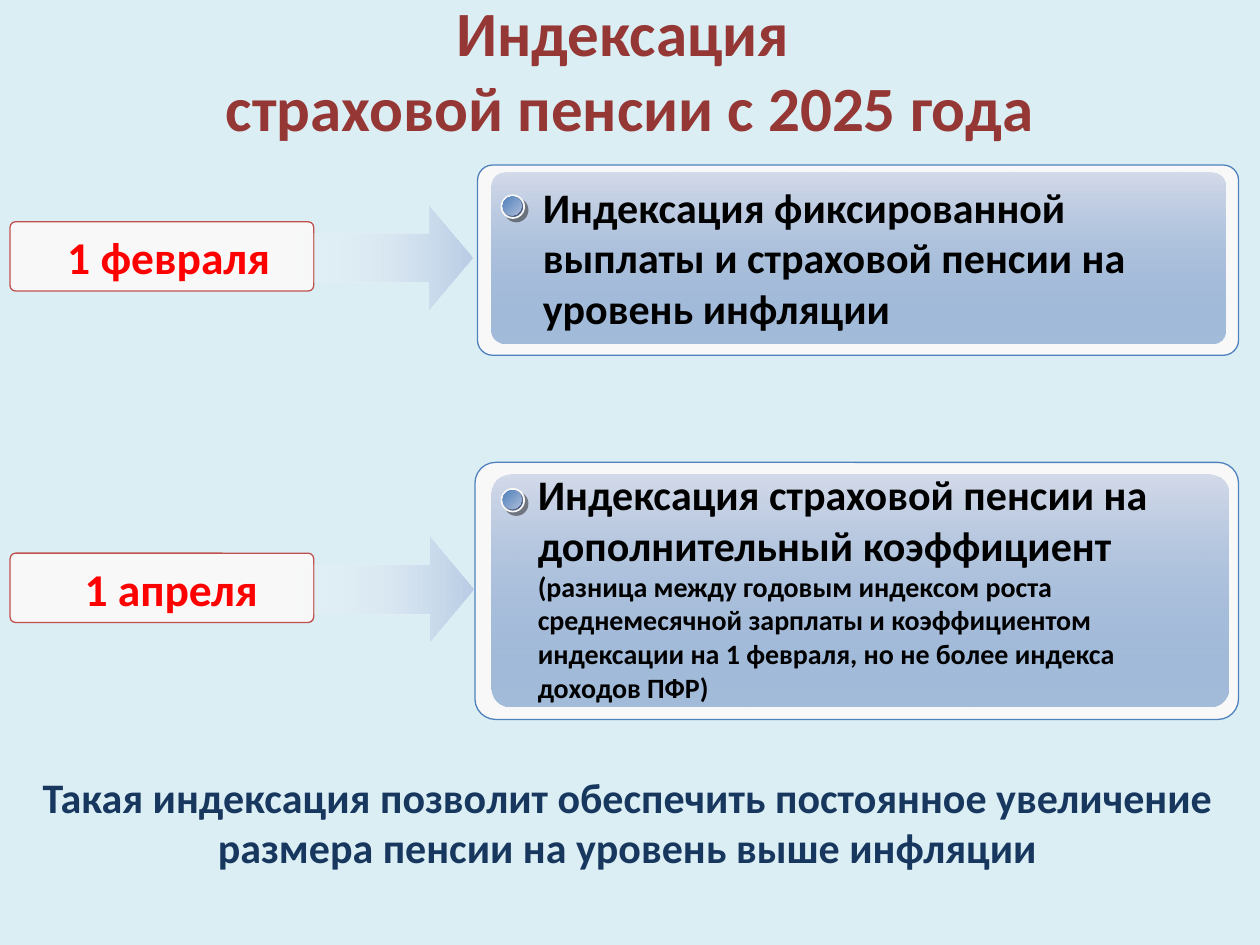
import dataclasses
import typing

import lxml.etree
import pptx
import pptx.dml.color
import pptx.enum.shapes
import pptx.enum.text
import pptx.oxml.ns
import pptx.util

Inches = pptx.util.Inches
ShapeKind = pptx.enum.shapes.MSO_SHAPE
Align = pptx.enum.text.PP_ALIGN

COLORS = {
    "background": "DBEEF4", "title": "953735", "date": "FF0000", "body": "000000",
    "conclusion": "17375E", "frame": "F8F8F8", "blue": "4F81BD", "red": "C0504D",
    "panel_top": "D3DAE9", "white": "FFFFFF", "arrow": "B9CDE5", "ring_light": "DDDDE1",
    "ring_dark": "223864", "bead_light": "ADBCD8", "shadow": "1C1C1C",
}


class Box(typing.NamedTuple):
    left: float
    top: float
    width: float
    height: float

    def lengths(self) -> list[pptx.util.Length]:
        return [Inches(value) for value in self]


class Stop(typing.NamedTuple):
    color: str
    opacity: int = 100


class Gradient(typing.NamedTuple):
    start: Stop
    end: Stop
    angle: int


class TextRun(typing.NamedTuple):
    text: str
    size: int
    color: str


@dataclasses.dataclass
class IndexationStep:
    frame: Box
    panel: Box
    date_frame: Box
    arrow: Box
    date_text: Box
    description: Box
    bullet_top: float
    date: str
    runs: list[TextRun]


PANEL_GRADIENT = Gradient(Stop("panel_top"), Stop("blue", 50), 270)
ARROW_GRADIENT = Gradient(Stop("white", 0), Stop("arrow"), 0)
RING_GRADIENT = Gradient(Stop("ring_light"), Stop("ring_dark"), 315)
BEAD_GRADIENT = Gradient(Stop("blue"), Stop("bead_light"), 315)

STEPS = [
    IndexationStep(
        Box(3.79, 1.31, 6.04, 1.51), Box(3.9, 1.37, 5.83, 1.36), Box(0.08, 1.76, 2.41, 0.55),
        Box(2.17, 1.63, 1.58, 0.83), Box(0.08, 1.77, 2.52, 0.54), Box(4.21, 1.39, 5.01, 1.31),
        1.55, "1 февраля",
        [TextRun("Индексация фиксированной выплаты и страховой пенсии на уровень инфляции",
                 24, "body")],
    ),
    IndexationStep(
        Box(3.77, 3.67, 6.06, 2.04), Box(3.9, 3.77, 5.85, 1.84), Box(0.08, 4.39, 2.41, 0.55),
        Box(2.18, 4.26, 1.58, 0.83), Box(0.1, 4.4, 2.52, 0.54), Box(4.17, 3.67, 5.63, 1.99),
        3.88, "1 апреля",
        [TextRun("Индексация страховой пенсии на дополнительный коэффициент ", 24, "body"),
         TextRun("(разница между годовым индексом роста среднемесячной зарплаты и "
                 "коэффициентом индексации на 1 февраля, но не более индекса доходов ПФР)",
                 16, "body")],
    ),
]


def rgb(name: str) -> pptx.dml.color.RGBColor:
    return pptx.dml.color.RGBColor.from_string(COLORS[name])


def add_element(parent, tag: str, **attributes: str):
    return lxml.etree.SubElement(parent, pptx.oxml.ns.qn(tag), attributes)


def fill_gradient(shape, gradient: Gradient) -> None:
    shape.fill.gradient()
    shape.fill.gradient_angle = gradient.angle
    stops = (gradient.start, gradient.end)
    for position, (target, stop) in enumerate(zip(shape.fill.gradient_stops, stops)):
        target.color.rgb = rgb(stop.color)
        target.position = position
    for element, stop in zip(shape._element.xpath(".//a:gradFill//a:srgbClr"), stops):
        if stop.opacity < 100:
            add_element(element, "a:alpha", val=str(stop.opacity * 1000))


def draw_shape(shapes, kind, box: Box, fill: str | Gradient, line: str | None = None,
               line_width: float = 0.75, adjustments: tuple[float, ...] = ()):
    shape = shapes.add_shape(kind, *box.lengths())
    shape.shadow.inherit = False
    for index, value in enumerate(adjustments):
        shape.adjustments[index] = value
    if isinstance(fill, Gradient):
        fill_gradient(shape, fill)
    else:
        shape.fill.solid()
        shape.fill.fore_color.rgb = rgb(fill)
    if line:
        shape.line.color.rgb = rgb(line)
        shape.line.width = pptx.util.Pt(line_width)
    else:
        shape.line.fill.background()
    return shape


def write_text(shape, runs: list[TextRun], alignment) -> None:
    frame = shape.text_frame
    frame.word_wrap = True
    frame.auto_size = pptx.enum.text.MSO_AUTO_SIZE.SHAPE_TO_FIT_TEXT
    paragraph = frame.paragraphs[0]
    paragraph.alignment = alignment
    for index, line in enumerate(runs):
        for part_index, part in enumerate(line.text.split("\n")):
            if part_index:
                paragraph.add_line_break()
            run = paragraph.add_run()
            run.text = part
            formats = {"name": "Calibri", "size": pptx.util.Pt(line.size), "bold": True}
            for attribute, value in formats.items():
                setattr(run.font, attribute, value)
            run.font.color.rgb = rgb(line.color)


def draw_text(slide, box: Box, runs: list[TextRun], alignment=Align.CENTER) -> None:
    write_text(slide.shapes.add_textbox(*box.lengths()), runs, alignment)


def draw_bullet(slide, top: float) -> None:
    group = slide.shapes.add_group_shape()
    ring = draw_shape(group.shapes, ShapeKind.OVAL, Box(3.98, top, 0.18, 0.18),
                      RING_GRADIENT, "frame", 1)
    effects = ring._element.spPr.find(pptx.oxml.ns.qn("a:effectLst"))
    shadow = add_element(effects, "a:outerShdw", dist=str(pptx.util.Pt(2.8)),
                         dir=str(45 * 60000), algn="ctr", rotWithShape="0")
    color = add_element(shadow, "a:srgbClr", val=COLORS["shadow"])
    add_element(color, "a:alpha", val="50000")
    draw_shape(group.shapes, ShapeKind.OVAL, Box(3.99, top + 0.01, 0.15, 0.15), BEAD_GRADIENT)


def draw_step(slide, step: IndexationStep) -> None:
    rounded = ShapeKind.ROUNDED_RECTANGLE
    draw_shape(slide.shapes, rounded, step.frame, "frame", "blue", adjustments=(0.08,))
    draw_shape(slide.shapes, rounded, step.panel, PANEL_GRADIENT, adjustments=(0.08,))
    draw_shape(slide.shapes, rounded, step.date_frame, "frame", "red", adjustments=(0.08,))
    draw_shape(slide.shapes, ShapeKind.RIGHT_ARROW, step.arrow, ARROW_GRADIENT,
               adjustments=(0.465, 0.421))
    draw_text(slide, step.date_text, [TextRun(step.date, 26, "date")])
    draw_bullet(slide, step.bullet_top)
    draw_text(slide, step.description, step.runs, Align.LEFT)


def main() -> None:
    presentation = pptx.Presentation()
    presentation.slide_width = Inches(10)
    presentation.slide_height = Inches(7.5)
    slide = presentation.slides.add_slide(presentation.slide_layouts.get_by_name("Title Only"))
    slide.background.fill.solid()
    slide.background.fill.fore_color.rgb = rgb("background")

    title = slide.shapes.title
    title.left, title.top, title.width, title.height = Box(0, -0.11, 10, 1.31).lengths()
    write_text(title, [TextRun("Индексация \nстраховой пенсии c 2025 года", 36, "title")],
               Align.CENTER)
    for step in STEPS:
        draw_step(slide, step)
    draw_text(slide, Box(0, 6.07, 9.96, 0.91), [TextRun(
        "Такая индексация позволит обеспечить постоянное увеличение размера пенсии "
        "на уровень выше инфляции", 24, "conclusion")])
    presentation.save("out.pptx")


if __name__ == "__main__":
    main()
